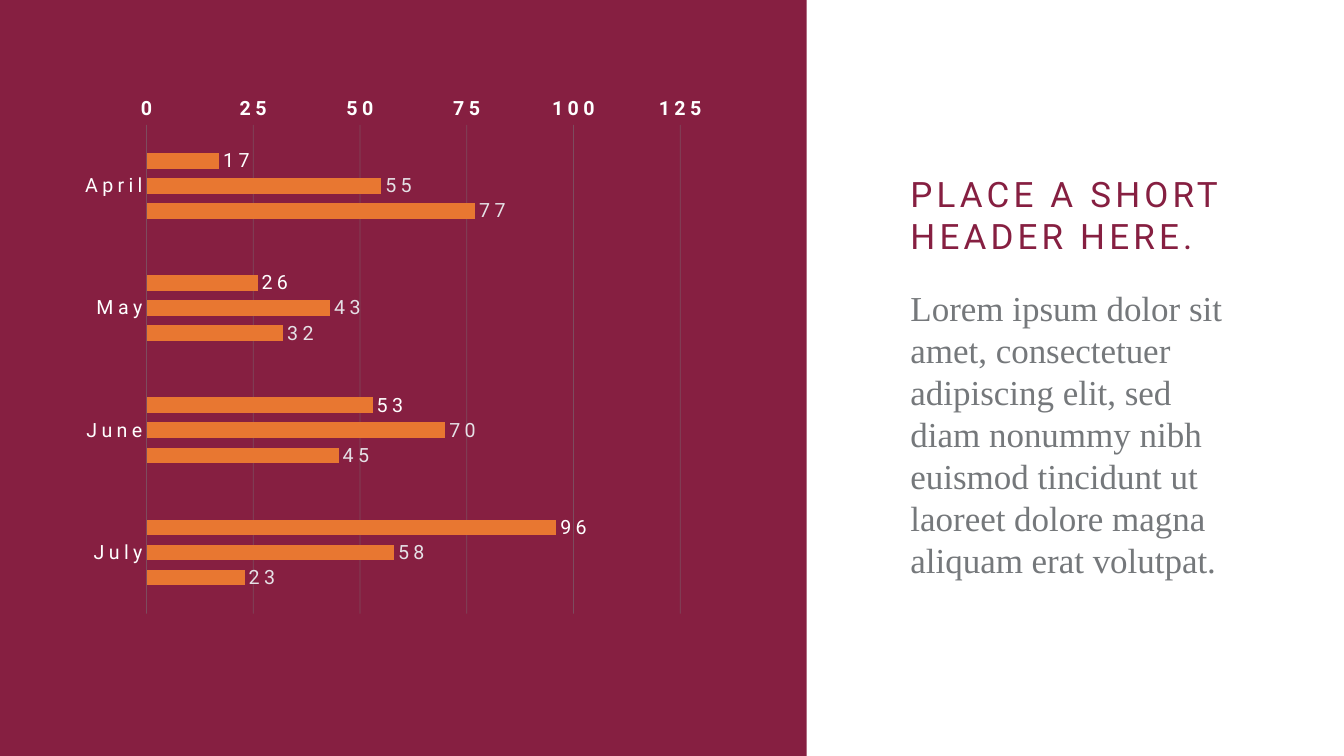
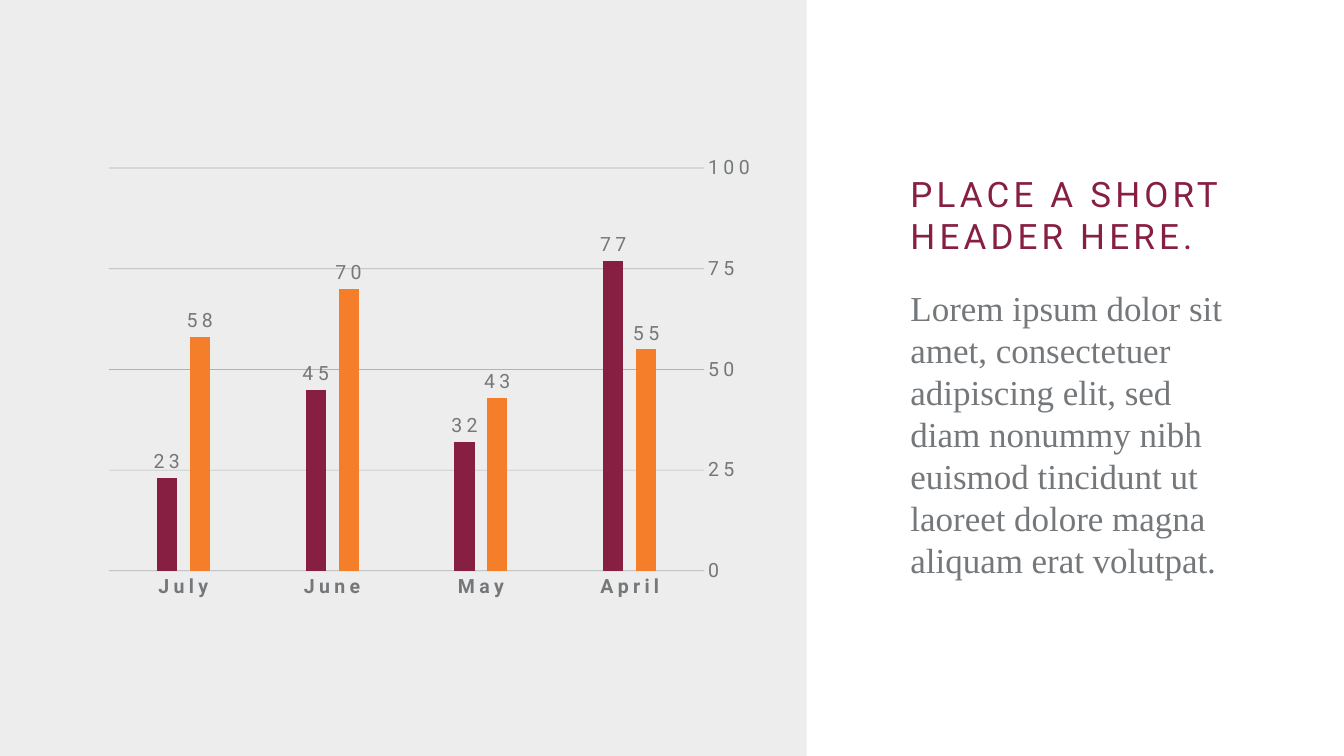
import pptx
import pptx.chart.data
import pptx.dml.color
import pptx.enum.chart
import pptx.enum.shapes
import pptx.enum.text
import pptx.oxml.ns
import pptx.util
from lxml import etree

Inches = pptx.util.Inches
Pt = pptx.util.Pt
qn = pptx.oxml.ns.qn

COLORS = {
    "maroon": "861F41",
    "burnt_orange": "E87731",
    "bright_orange": "F47E29",
    "gray": "75787B",
    "pale_gray": "EDEDED",
    "mist": "E5E1E6",
    "white": "FFFFFF",
}
SANS = "Roboto"
SERIF = "Times New Roman"
LETTER_SPACING = "300"
PLOT_AREA = {"x": 0.222, "y": 0.238, "w": 0.728, "h": 0.504}
MONTHS = ["April", "May", "June", "July"]
PANEL_BOX = (0, 0, 8, 7.5)
TEXT_BOX = (8.98, 1.66, 4.3, 4.2)
HEADER = "PLACE A SHORT HEADER HERE."
BODY = (
    "Lorem ipsum dolor sit amet, consectetuer adipiscing elit, sed diam nonummy nibh "
    "euismod tincidunt ut laoreet dolore magna aliquam erat volutpat."
)


def rgb(name):
    return pptx.dml.color.RGBColor.from_string(COLORS[name])


def style_font(font, size, color, face=SANS, bold=False):
    font.size = Pt(size)
    font.name = face
    font.bold = bold
    font.color.rgb = rgb(color)


def add_panel(slide, box, color):
    panel = slide.shapes.add_shape(
        pptx.enum.shapes.MSO_SHAPE.RECTANGLE, *map(Inches, box))
    panel.shadow.inherit = False
    panel.fill.solid()
    panel.fill.fore_color.rgb = rgb(color)
    panel.line.fill.background()


def add_text(slide, box, text, face, color):
    frame = slide.shapes.add_textbox(*map(Inches, box)).text_frame
    frame.word_wrap = True
    frame.auto_size = pptx.enum.text.MSO_AUTO_SIZE.SHAPE_TO_FIT_TEXT
    frame.margin_left = frame.margin_right = Inches(0.05)
    frame.margin_top = frame.margin_bottom = Inches(0.05)
    paragraph = frame.paragraphs[0]
    paragraph.line_spacing = Pt(30)
    run = paragraph.add_run()
    run.text = text
    style_font(run.font, 25, color, face)
    return run


def add_message(slide, box):
    left, top, width, height = box
    header = add_text(slide, (left, top, width, 0.94), HEADER, SANS, "maroon")
    header.font.element.set("spc", LETTER_SPACING) if hasattr(
        header.font, "element") else header._r.get_or_add_rPr().set("spc", LETTER_SPACING)
    add_text(slide, (left, top + 1.13, 3.22, height - 1.15), BODY, SERIF, "gray")


def fix_plot_area(chart):
    plot_area = chart.element.find(".//" + qn("c:plotArea"))
    for old_layout in plot_area.findall(qn("c:layout")):
        plot_area.remove(old_layout)
    layout = etree.Element(qn("c:layout"))
    manual = etree.SubElement(layout, qn("c:manualLayout"))
    settings = {"layoutTarget": "inner", "xMode": "edge", "yMode": "edge", **PLOT_AREA}
    for tag, value in settings.items():
        etree.SubElement(manual, qn("c:" + tag)).set("val", str(value))
    plot_area.insert(0, layout)


def style_axis(axis, color, bold):
    axis.major_tick_mark = pptx.enum.chart.XL_TICK_MARK.NONE
    axis.minor_tick_mark = pptx.enum.chart.XL_TICK_MARK.NONE
    axis.format.line.fill.background()
    style_font(axis.tick_labels.font, 14, color, bold=bold)


def add_month_chart(slide, box, kind, series_styles, axis_color, bold_months, top_value, gap, overlap):
    data = pptx.chart.data.CategoryChartData(number_format="General")
    data.categories = MONTHS
    for number, (values, _, _) in enumerate(series_styles, 1):
        data.add_series(f"Series {number}", values)
    chart = slide.shapes.add_chart(kind, *map(Inches, box), data).chart
    chart.has_legend = False
    chart.has_title = False
    style_font(chart.font, 10, "maroon")

    months, scale = chart.category_axis, chart.value_axis
    style_axis(months, axis_color, bold_months)
    style_axis(scale, axis_color, not bold_months and axis_color == "white")
    months.reverse_order = True
    months.crosses = pptx.enum.chart.XL_AXIS_CROSSES.MAXIMUM
    scale.minimum_scale, scale.maximum_scale, scale.major_unit = 0, top_value, 25
    scale.has_major_gridlines = True
    grid = scale.major_gridlines.format.line
    grid.width = Pt(0.5)
    grid.color.rgb = rgb("gray")
    grid_color = chart.element.find(f".//{qn('c:majorGridlines')}//{qn('a:srgbClr')}")
    etree.SubElement(grid_color, qn("a:alpha")).set("val", "50000")

    plot = chart.plots[0]
    plot.vary_by_categories = False
    plot.gap_width, plot.overlap = gap, overlap
    for series, (_, fill, label_color) in zip(plot.series, series_styles):
        series.format.fill.solid()
        series.format.fill.fore_color.rgb = rgb(fill)
        labels = series.data_labels
        labels.show_value = True
        labels.position = pptx.enum.chart.XL_LABEL_POSITION.OUTSIDE_END
        labels.number_format = "#,##0"
        labels.number_format_is_linked = False
        style_font(labels.font, 14, label_color)

    fix_plot_area(chart)
    for properties in chart.element.iter(qn("a:defRPr")):
        properties.set("spc", LETTER_SPACING)


def add_chart_slide(deck, panel_color, **chart_settings):
    slide = deck.slides.add_slide(deck.slide_layouts[6])
    add_panel(slide, PANEL_BOX, panel_color)
    add_month_chart(slide, **chart_settings)
    add_message(slide, TEXT_BOX)


def main():
    deck = pptx.Presentation()
    deck.slide_width, deck.slide_height = Inches(13.33), Inches(7.5)
    add_chart_slide(
        deck, "maroon",
        box=(-0.16, -1.05, 7.27, 9.62),
        kind=pptx.enum.chart.XL_CHART_TYPE.BAR_CLUSTERED,
        series_styles=[
            ((17, 26, 53, 96), "burnt_orange", "white"),
            ((55, 43, 70, 58), "burnt_orange", "mist"),
            ((77, 32, 45, 23), "burnt_orange", "mist"),
        ],
        axis_color="white", bold_months=False, top_value=125, gap=360, overlap=-60)
    add_chart_slide(
        deck, "pale_gray",
        box=(-0.72, -0.22, 8.16, 7.93),
        kind=pptx.enum.chart.XL_CHART_TYPE.COLUMN_CLUSTERED,
        series_styles=[
            ((55, 43, 70, 58), "bright_orange", "gray"),
            ((77, 32, 45, 23), "maroon", "gray"),
        ],
        axis_color="gray", bold_months=True, top_value=100, gap=478, overlap=-64)
    deck.save("out.pptx")


if __name__ == "__main__":
    main()
